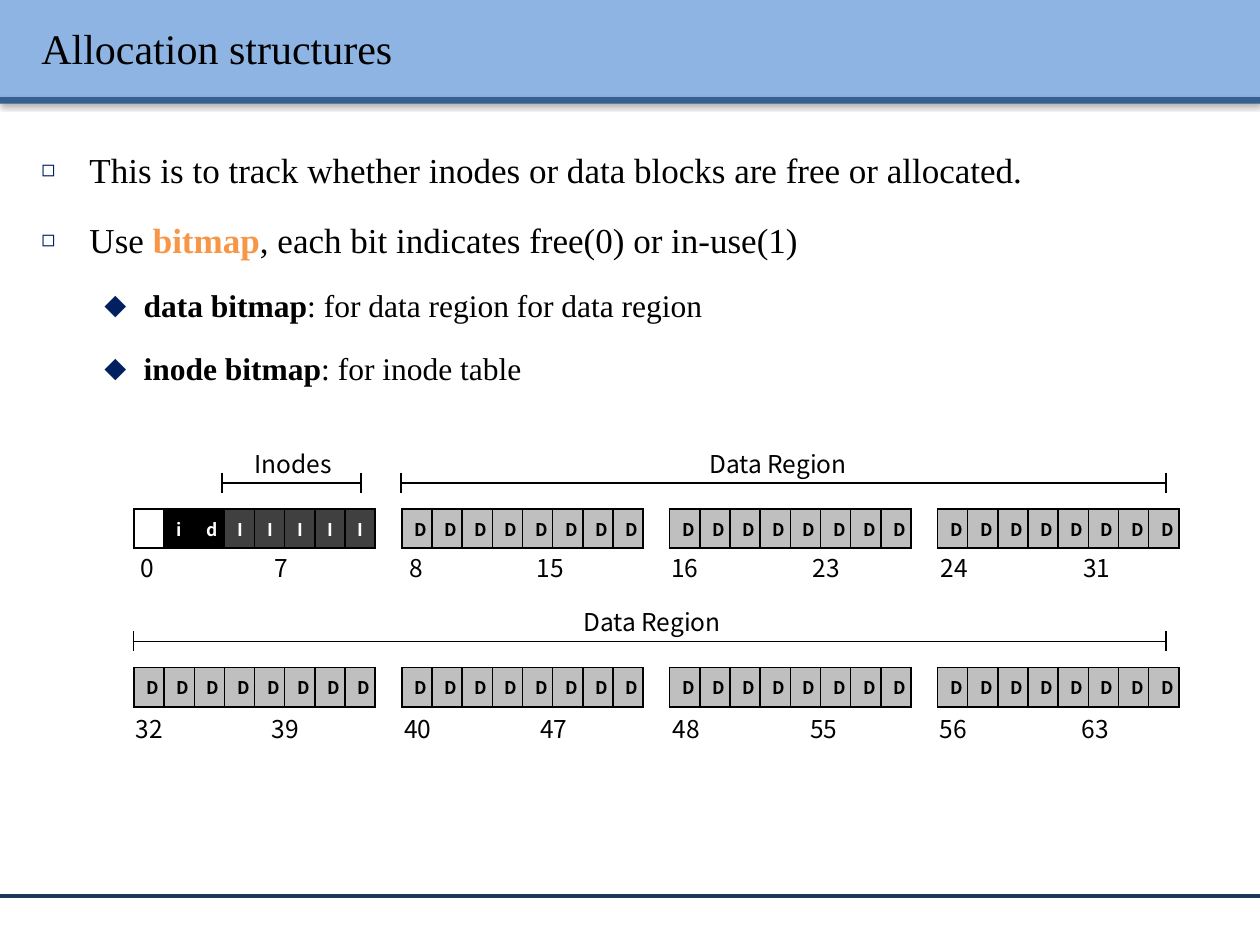
"""Build the slide on allocation structures with its block map."""
from lxml.etree import SubElement as Sub
from pptx import Presentation
from pptx.dml.color import RGBColor as Rgb
from pptx.enum.shapes import MSO_CONNECTOR as Link, MSO_SHAPE as Shape
from pptx.enum.text import MSO_ANCHOR as Anchor, MSO_AUTO_SIZE as Fit, PP_ALIGN as Align
from pptx.oxml.ns import qn
from pptx.util import Cm, Pt

HUES = {"sky": "8EB4E3", "blue": "376092", "navy": "17375E", "mark": "002060",
        "black": "000000", "white": "FFFFFF", "dark": "404040", "gray": "BFBFBF",
        "orange": "F79646"}
SERIF, SANS = "Times New Roman", "Noto Sans CJK KR"

TITLE = "Allocation structures"
POINTS = [
    (0, [("This is to track whether inodes or data blocks are free or allocated.", {})]),
    (0, [("Use ", {}), ("bitmap", {"hue": "orange", "bold": True}),
         (", each bit indicates free(0) or in-use(1)", {})]),
    (1, [("data bitmap", {"bold": True}), (": for data region for data region", {})]),
    (1, [("inode bitmap", {"bold": True}), (": for inode table", {})]),
]
LEVELS = [
    {"size": 20, "left": 0.97, "hang": 0.97, "mark": "◻", "scale": 65},
    {"size": 18, "left": 2.06, "hang": 0.79, "mark": "⬥", "scale": 100},
]
FILLS = {" ": ("white", "black"), "i": ("black", "white"), "d": ("black", "white"),
         "I": ("dark", "white"), "D": ("gray", "black")}
BLOCKS = [" idIIIII"] + ["D" * 8] * 7
ROWS = [
    {"top": 10.26, "low": 11.02,
     "labels": [(2.59, 2.7), (8, 2.57), (13.28, 2.85), (18.72, 2.87)]},
    {"top": 13.46, "low": 14.27,
     "labels": [(2.49, 2.74), (7.9, 2.74), (13.31, 2.77), (18.69, 2.87)]},
]
SPANS = [("Inodes", 4.47, 7.28, 9.73, 4.88), ("Data Region", 8.08, 23.5, 9.73, 14.05),
         ("Data Region", 2.69, 23.5, 12.93, 11.51)]


def write(par, text, size=14, font=SANS, hue="black", bold=False):
    run = par.add_run()
    run.text = text
    run.font.size, run.font.name, run.font.bold = Pt(size), font, bold
    run.font.color.rgb = Rgb.from_string(HUES[hue])
    return run


def shade(list_, blur, dist, turn, alpha):
    cast = Sub(list_, qn("a:outerShdw"), blurRad=str(Pt(blur)), dist=str(Pt(dist)),
               dir=str(turn * 60000), rotWithShape="0")
    tint = Sub(cast, qn("a:srgbClr"), val=HUES["black"])
    Sub(tint, qn("a:alpha"), val=str(alpha * 1000))


def bar(top, high, hue):
    box = shapes.add_shape(Shape.RECTANGLE, 0, Cm(top), deck.slide_width, Cm(high))
    box.fill.solid()
    box.fill.fore_color.rgb = Rgb.from_string(HUES[hue])
    box.line.fill.background()
    box.shadow.inherit = False
    shade(box.element.spPr.find(qn("a:effectLst")), 3.1, 1.6, 90, 38)


def line(x1, y1, x2, y2, hue="black", width=1):
    link = shapes.add_connector(Link.STRAIGHT, Cm(x1), Cm(y1), Cm(x2), Cm(y2))
    link.line.color.rgb = Rgb.from_string(HUES[hue])
    link.line.width = Pt(width)
    Sub(link.element.spPr, qn("a:effectLst"))


def label(text, left, top, wide, tab=None):
    frame = shapes.add_textbox(Cm(left), Cm(top), Cm(wide), Cm(0.86)).text_frame
    frame.word_wrap = True
    par = frame.paragraphs[0]
    write(par, text)
    if tab:
        stops = Sub(par._p.get_or_add_pPr(), qn("a:tabLst"))
        Sub(stops, qn("a:tab"), pos=str(Cm(tab)), algn="l")


def place(holder, top, high, anchor):
    holder.left, holder.top, holder.width, holder.height = Cm(0.58), Cm(top), Cm(24.41), Cm(high)
    holder.element.getparent().append(holder.element)
    frame = holder.text_frame
    frame.word_wrap, frame.auto_size, frame.vertical_anchor = True, Fit.NONE, anchor
    return frame


def bullet(par, level):
    look = LEVELS[level]
    par.level, par.line_spacing, par.alignment = level, 1.5, Align.LEFT
    prop = par._p.get_or_add_pPr()
    prop.set("marL", str(Cm(look["left"])))
    prop.set("indent", str(-Cm(look["hang"])))
    Sub(Sub(prop, qn("a:buClr")), qn("a:srgbClr"), val=HUES["mark"])
    Sub(prop, qn("a:buSzPct"), val=str(look["scale"] * 1000))
    Sub(prop, qn("a:buChar"), char=look["mark"])
    return look["size"]


def block(marks, left, top):
    grid = shapes.add_table(1, len(marks), Cm(left), Cm(top), Cm(4.62), Cm(0.79)).table
    grid.first_row = grid.horz_banding = False
    for col, mark in enumerate(marks):
        grid.columns[col].width = Cm(0.58)
        cell = grid.cell(0, col)
        back, ink = FILLS[mark]
        prop = cell._tc.get_or_add_tcPr()
        for side in ("lnL", "lnR", "lnT", "lnB"):
            edge = Sub(prop, qn(f"a:{side}"), w=str(Pt(1)))
            Sub(Sub(edge, qn("a:solidFill")), qn("a:srgbClr"), val=HUES["black"])
        cell.fill.solid()
        cell.fill.fore_color.rgb = Rgb.from_string(HUES[back])
        cell.vertical_anchor = Anchor.MIDDLE
        par = cell.text_frame.paragraphs[0]
        par.alignment = Align.CENTER
        if mark == " ":
            Sub(par._p, qn("a:endParaRPr"), sz="1000")
        else:
            write(par, mark, size=10, hue=ink, bold=True)


deck = Presentation()
deck.slide_width, deck.slide_height = Cm(25.4), Cm(19.05)
slide = deck.slides.add_slide(deck.slide_layouts[1])
shapes = slide.shapes

bar(0, 1.96, "sky")
bar(1.96, 0.13, "blue")
line(0, 18.06, 25.4, 18.06, "navy", 2)

head = place(shapes.title, 0.15, 1.63, Anchor.MIDDLE).paragraphs[0]
head.alignment = Align.LEFT
run = write(head, TITLE, size=24, font=SERIF)
glow = Sub(run.font._element, qn("a:effectLst"))
run.font._element.find(qn("a:solidFill")).addnext(glow)
shade(glow, 3, 3, 45, 43)

body = place(slide.placeholders[1], 2.44, 15.29, Anchor.TOP)
for num, (level, parts) in enumerate(POINTS):
    par = body.add_paragraph() if num else body.paragraphs[0]
    size = bullet(par, level)
    for text, look in parts:
        write(par, text, size=size, font=SERIF, **look)

for num, marks in enumerate(BLOCKS):
    row, col = divmod(num, 4)
    spot = ROWS[row]
    block(marks, 2.7 + 5.4 * col, spot["top"])
    left, tab = spot["labels"][col]
    label(f"{num * 8}\t{num * 8 + 7}", left, spot["low"], 5.1, tab)

for text, start, end, mid, left in SPANS:
    line(start, mid, end, mid)
    for side in (start, end):
        line(side, mid - 0.2, side, mid + 0.2)
    label(text, left, mid - 0.81, 2.13 if text == "Inodes" else 3.45)

deck.save("out.pptx")
